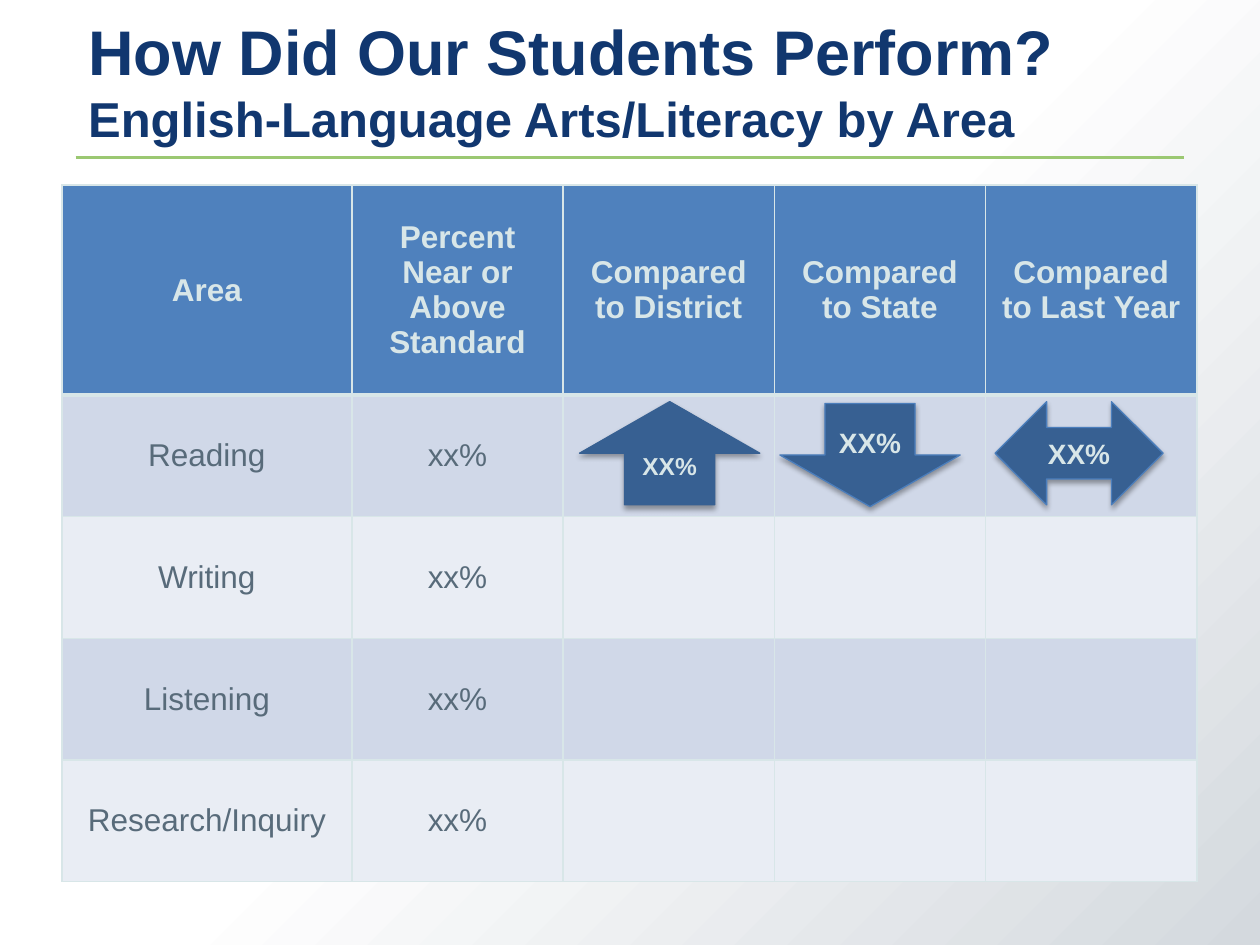
from lxml import etree
from pptx import Presentation
from pptx.dml.color import RGBColor
from pptx.enum import shapes, text
from pptx.oxml import ns
from pptx.util import Pt

COLORS = {
    "white": "FFFFFF", "mist": "D4D9DE", "navy": "11376F", "green": "9BC872",
    "pale": "D8E6E8", "header": "4F81BD", "slate": "586B7A",
    "band": "D0D8E8", "light": "E9EDF4", "arrow": "376092", "edge": "4B7EBC",
}
HEADERS = ["Area", "Percent Near or Above Standard", "Compared to District",
           "Compared to State", "Compared to Last Year"]
AREAS = ["Reading", "Writing", "Listening", "Research/Inquiry"]
WIDTHS = [165.8] + [120.7] * 4
HEIGHTS = [120] + [69.5] * 4
ARROWS = [
    (shapes.MSO_SHAPE.UP_ARROW, 331.2, 229.5, 103, 14, "arrow"),
    (shapes.MSO_SHAPE.DOWN_ARROW, 445.7, 230.5, 103, 16, "edge"),
    (shapes.MSO_SHAPE.LEFT_RIGHT_ARROW, 568.6, 229.5, 96, 16, "edge"),
]


def rgb(name):
    return RGBColor.from_string(COLORS[name])


def add_child(parent, tag, **attributes):
    child = etree.SubElement(parent, ns.qn(tag))
    for key, value in attributes.items():
        child.set(key, str(value))
    return child


def write(para, words, size=18, color="slate", bold=False, align=None, gap=0):
    span = para.add_run()
    span.text = words
    span.font.name = "Arial"
    span.font.size = Pt(size)
    span.font.bold = bold
    span.font.color.rgb = rgb(color)
    para.alignment = align
    para.space_before = para.space_after = Pt(gap)


def set_background(page):
    fill = page.background.fill
    fill.gradient()
    fill.gradient_angle = 315
    for stop, position, color in zip(fill.gradient_stops, (0.5, 1), ("white", "mist")):
        stop.position = position
        stop.color.rgb = rgb(color)


def add_rule(page):
    rule = page.shapes.add_connector(
        shapes.MSO_CONNECTOR.STRAIGHT, Pt(43.2), Pt(90), Pt(676.8), Pt(90))
    rule.line.color.rgb = rgb("green")
    rule.line.width = Pt(2)
    add_child(rule._element.spPr, "a:effectLst")


def set_title(page):
    title = page.shapes.title
    title.left, title.top, title.width, title.height = Pt(43.2), Pt(43.2), Pt(634.3), Pt(44.6)
    frame = title.text_frame
    frame.auto_size = text.MSO_AUTO_SIZE.NONE
    frame.word_wrap = True
    frame.vertical_anchor = text.MSO_ANCHOR.BOTTOM
    para = frame.paragraphs[0]
    style = dict(color="navy", bold=True, align=text.PP_ALIGN.LEFT)
    write(para, "How Did Our Students Perform?", size=36, **style)
    para.add_line_break()
    write(para, "English-Language Arts/Literacy by Area", size=28, **style)


def set_borders(cell, bottom):
    properties = cell._tc.get_or_add_tcPr()
    for side, width in (("L", 1), ("R", 1), ("T", 1), ("B", bottom)):
        line = add_child(properties, f"a:ln{side}", w=Pt(width))
        add_child(add_child(line, "a:solidFill"), "a:srgbClr", val=COLORS["pale"])


def format_cell(cell, words, fill, bottom=1, **style):
    set_borders(cell, bottom)
    cell.fill.solid()
    cell.fill.fore_color.rgb = rgb(fill)
    cell.vertical_anchor = text.MSO_ANCHOR.MIDDLE
    if words:
        write(cell.text_frame.paragraphs[0], words, align=text.PP_ALIGN.CENTER, **style)


def add_results(page):
    table = page.shapes.add_table(
        len(HEIGHTS), len(WIDTHS), Pt(35.3), Pt(105.8),
        Pt(sum(WIDTHS)), Pt(sum(HEIGHTS))).table
    for column, width in zip(table.columns, WIDTHS):
        column.width = Pt(width)
    for row, height in zip(table.rows, HEIGHTS):
        row.height = Pt(height)
    for index, words in enumerate(HEADERS):
        format_cell(table.cell(0, index), words, "header", bottom=3,
                    color="pale", bold=True, gap=0 if index == 1 else 18)
    for number, area in enumerate(AREAS, 1):
        fill = "band" if number % 2 else "light"
        for index, words in enumerate([area, "xx%", "", "", ""]):
            format_cell(table.cell(number, index), words, fill, gap=18)


def add_shadow(shape):
    effects = add_child(shape._element.spPr, "a:effectLst")
    shadow = add_child(effects, "a:outerShdw", blurRad=Pt(3.1), dist=Pt(1.8),
                       dir=90 * 60000, rotWithShape=0)
    color = add_child(shadow, "a:srgbClr", val="000000")
    add_child(color, "a:alpha", val=35000)


def add_arrow(page, kind, left, top, width, size, edge):
    arrow = page.shapes.add_shape(kind, Pt(left), Pt(top), Pt(width), Pt(59))
    arrow.fill.solid()
    arrow.fill.fore_color.rgb = rgb("arrow")
    arrow.line.color.rgb = rgb(edge)
    arrow.line.width = Pt(0.75)
    add_shadow(arrow)
    frame = arrow.text_frame
    frame.vertical_anchor = text.MSO_ANCHOR.MIDDLE
    write(frame.paragraphs[0], "XX%", size=size, color="pale", bold=True,
          align=text.PP_ALIGN.CENTER)


def main():
    deck = Presentation()
    deck.slide_width, deck.slide_height = Pt(720), Pt(540)
    page = deck.slides.add_slide(deck.slide_layouts[5])
    set_background(page)
    add_rule(page)
    set_title(page)
    add_results(page)
    for arrow in ARROWS:
        add_arrow(page, *arrow)
    deck.save("out.pptx")


if __name__ == "__main__":
    main()
